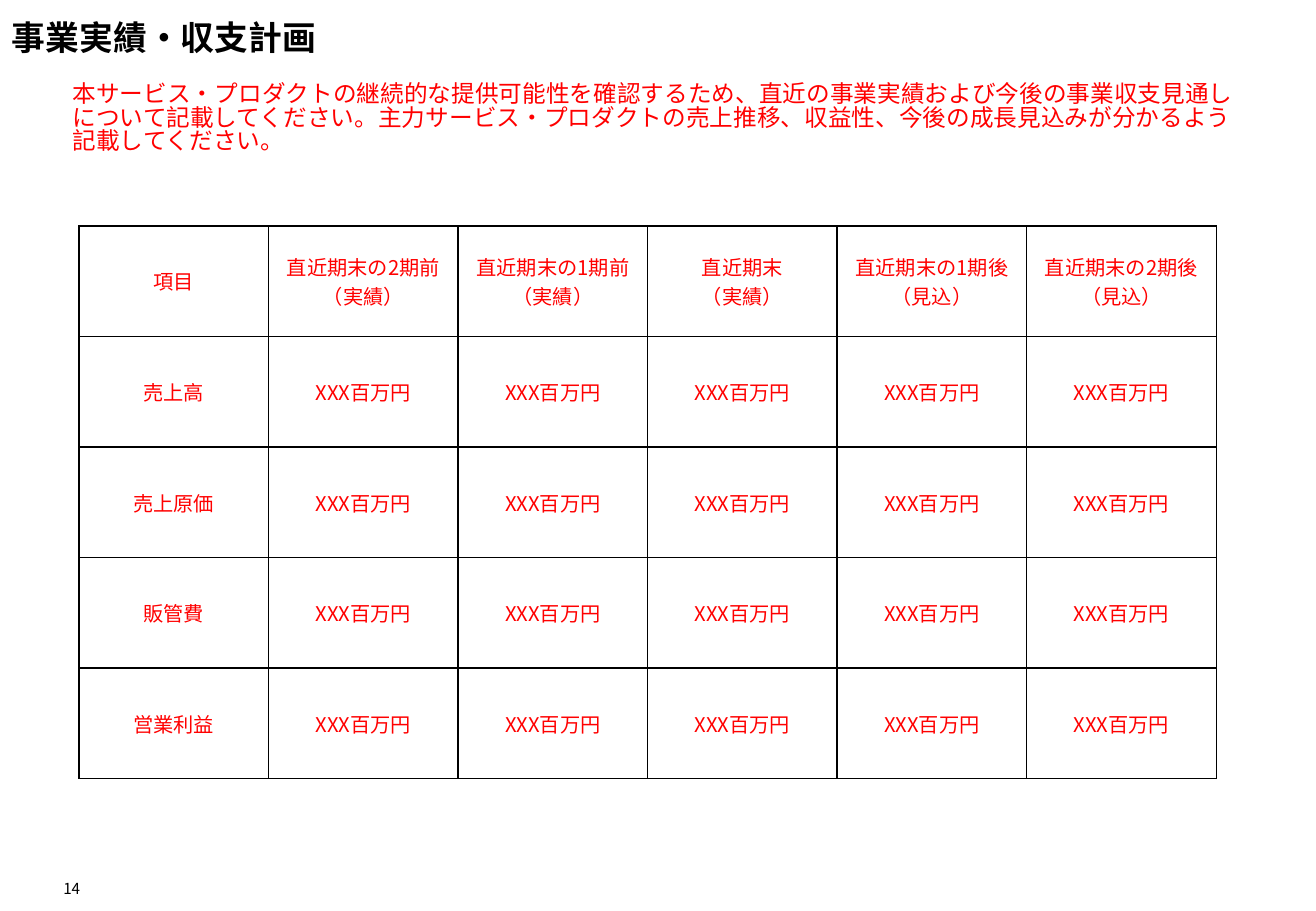
from lxml import etree
from pptx import Presentation
from pptx import util as u
from pptx.dml.color import RGBColor
from pptx.enum import text
from pptx.oxml import ns

FONT = "Noto Sans CJK JP"
BLACK, RED, WHITE = "000000", "FF0000", "FFFFFF"
COLUMN_WIDTH, ROW_HEIGHT = 1.56, 0.91
CELL_MARGIN = 0.01

TITLE = "事業実績・収支計画"
GUIDANCE = (
    "本サービス・プロダクトの継続的な提供可能性を確認するため、"
    "直近の事業実績および今後の事業収支見通しについて記載してください。"
    "主力サービス・プロダクトの売上推移、収益性、今後の成長見込みが分かるよう記載してください。"
)
PERIODS = [
    "直近期末の2期前\n（実績）",
    "直近期末の1期前\n（実績）",
    "直近期末\n（実績）",
    "直近期末の1期後\n（見込）",
    "直近期末の2期後\n（見込）",
]
ITEMS = ["売上高", "売上原価", "販管費", "営業利益"]
AMOUNT = "XXX百万円"


def color(value):
    return RGBColor.from_string(value)


def fill_text(frame, content, size, font_color, bold=False, align=text.PP_ALIGN.LEFT):
    frame.text = content
    for paragraph in frame.paragraphs:
        paragraph.alignment = align
        for run in paragraph.runs:
            run.font.name = FONT
            run.font.size = u.Pt(size)
            run.font.bold = bold
            run.font.color.rgb = color(font_color)
            east_asian = etree.SubElement(run.font._element, ns.qn("a:ea"))
            east_asian.set("typeface", FONT)


def set_margins(target, margin):
    target.margin_left = target.margin_right = u.Inches(margin)
    target.margin_top = target.margin_bottom = u.Inches(margin)


def add_text(slide, box, content, size, font_color, anchor, wrap=True, **style):
    shape = slide.shapes.add_textbox(*(u.Inches(length) for length in box))
    frame = shape.text_frame
    frame.word_wrap = wrap
    frame.vertical_anchor = anchor
    fill_text(frame, content, size, font_color, **style)
    return frame


def add_borders(cell):
    properties = cell._tc.get_or_add_tcPr()
    for position, side in enumerate(("lnL", "lnR", "lnT", "lnB")):
        line = etree.Element(ns.qn(f"a:{side}"), w=str(u.Pt(1)))
        fill = etree.SubElement(line, ns.qn("a:solidFill"))
        etree.SubElement(fill, ns.qn("a:srgbClr"), val=BLACK)
        properties.insert(position, line)


def add_grid(slide, left, top, rows):
    row_count, column_count = len(rows), len(rows[0])
    table = slide.shapes.add_table(
        row_count, column_count, u.Inches(left), u.Inches(top),
        u.Inches(COLUMN_WIDTH * column_count), u.Inches(ROW_HEIGHT * row_count),
    ).table
    table.first_row = table.horz_banding = False
    for row_index, row in enumerate(rows):
        for column_index, content in enumerate(row):
            cell = table.cell(row_index, column_index)
            cell.fill.solid()
            cell.fill.fore_color.rgb = color(WHITE)
            cell.vertical_anchor = text.MSO_ANCHOR.MIDDLE
            set_margins(cell, CELL_MARGIN)
            fill_text(cell.text_frame, content, 12, RED, align=text.PP_ALIGN.CENTER)
            add_borders(cell)


def main():
    presentation = Presentation()
    presentation.slide_width = u.Inches(10.83)
    presentation.slide_height = u.Inches(7.5)
    slide = presentation.slides.add_slide(presentation.slide_layouts[6])

    add_text(slide, (0, 0, 9.34, 0.61), TITLE, 20, BLACK,
             text.MSO_ANCHOR.MIDDLE, bold=True)
    guidance = add_text(slide, (0.5, 0.64, 9.84, 0.41), GUIDANCE, 14, RED,
                        text.MSO_ANCHOR.TOP)
    guidance.paragraphs[0].line_spacing = 0.83

    header = ["項目", *PERIODS]
    body = [[item] + [AMOUNT] * len(PERIODS) for item in ITEMS]
    add_grid(slide, 0.65, 1.86, [header, *body])

    page_number = add_text(slide, (0.46, 7.2, 0.2, 0.19), "14", 9, BLACK,
                           text.MSO_ANCHOR.BOTTOM, wrap=False,
                           align=text.PP_ALIGN.RIGHT)
    set_margins(page_number, 0)

    presentation.save("out.pptx")


if __name__ == "__main__":
    main()
